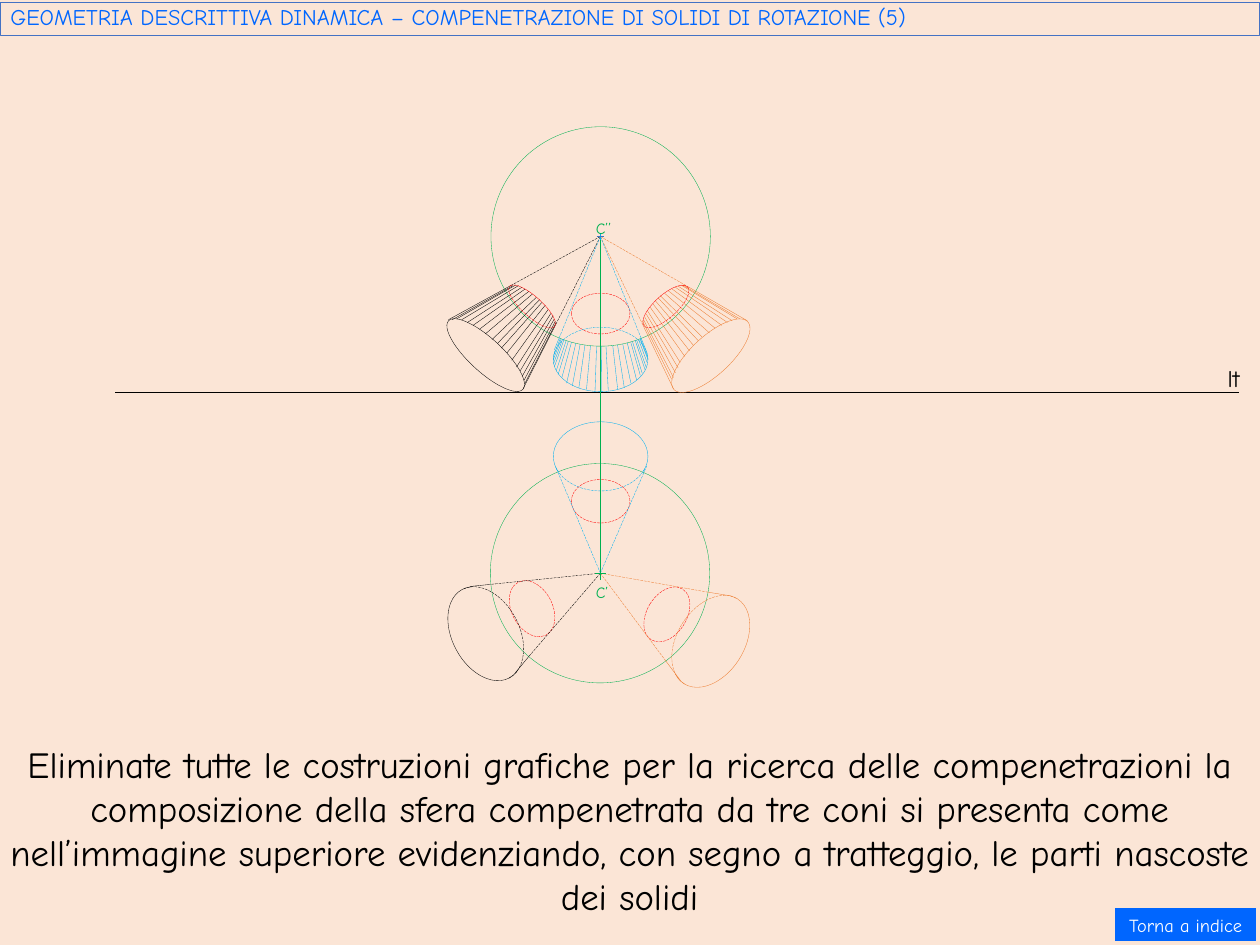
from math import hypot

from lxml import etree
from pptx import Presentation
from pptx.dml.color import RGBColor
from pptx.enum.dml import MSO_LINE
from pptx.enum.shapes import MSO_CONNECTOR, MSO_SHAPE
from pptx.enum.text import MSO_ANCHOR, MSO_AUTO_SIZE, PP_ALIGN
from pptx.oxml.ns import qn
from pptx.util import Pt

STRAIGHT = MSO_CONNECTOR.STRAIGHT
ELLIPSE, ARC, BUTTON = MSO_SHAPE.OVAL, MSO_SHAPE.ARC, MSO_SHAPE.ACTION_BUTTON_CUSTOM
DASH = MSO_LINE.LONG_DASH
MIDDLE, TOP = MSO_ANCHOR.MIDDLE, MSO_ANCHOR.TOP
LEFT, CENTER = PP_ALIGN.LEFT, PP_ALIGN.CENTER
GROW, FIXED = MSO_AUTO_SIZE.SHAPE_TO_FIT_TEXT, MSO_AUTO_SIZE.NONE

FONT = "Comic Neue"
BLACK, ORANGE, CYAN = "000000", "ED7D31", "00B0F0"
GREEN, RED, BLUE, STEEL = "00B050", "FF0000", "0066FF", "4472C4"

APEX_FRONT = (457, 180)
APEX_PLAN = (457, 436.3)
RADIUS = 83.5
CUT_RATIO = 0.59  # share of each side cone's generatrix inside the sphere

BLACK_RIM = [
    (341.3, 243.4), (344.2, 243.4), (347.8, 242.6), (351.4, 243.4), (355.7, 245.5),
    (360, 247.7), (365, 250.6), (369.4, 254.2), (374.4, 258.5), (378.7, 261.4),
    (381.6, 265), (385.9, 268.6), (389.5, 274.3), (393.1, 279.4), (396, 282.2),
    (397.4, 286.6), (398.9, 289.4), (399.6, 291.6), (398.2, 295.9)]
ORANGE_RIM = [
    (568.8, 244.1), (563, 242.6), (560.9, 242.6), (557.3, 244.1), (553.7, 245.5),
    (549.4, 247.7), (544.3, 249.8), (540, 253.4), (534.2, 256.3), (531.4, 259.2),
    (527.8, 262.8), (524.9, 267.1), (521.3, 271.4), (517.7, 275.8), (516.2, 280.1),
    (514.1, 283.7), (512.6, 287.3), (511.2, 288.7), (512.6, 295.9)]
CYAN_RIM = [
    (492.5, 268.6), (492.5, 270.7), (493.2, 273.6), (492.5, 275.8), (491.8, 279.4),
    (491, 281.5), (488.9, 284.4), (487.4, 285.8), (484.6, 289.4), (480.2, 291.6),
    (475.2, 295.2), (470.2, 296.6), (463, 297.4), (457.9, 298.1), (452.9, 298.1),
    (446.4, 296.6), (440.6, 295.2), (435.6, 293.8), (431.3, 291.6), (427.7, 287.3),
    (424.8, 285.1), (423.4, 282.2), (421.9, 279.4), (421.2, 277.2), (421.2, 273.6),
    (421.9, 269.3), (421.9, 266.4)]

# Colour, end of the hidden part, end on the base (None: no visible part)
PLAN_EDGES = [
    (BLACK, (371.5, 445), (357.8, 446.4)),
    (BLACK, (402.5, 499.7), (392.4, 511.9)),
    (ORANGE, (538.6, 450.7), (556.6, 453.6)),
    (ORANGE, (506.9, 503.3), (517.7, 517.7)),
    (CYAN, (492.5, 354.2), None),
    (CYAN, (423.4, 356.4), None)]

# Box, colour, rotation, dash
ELLIPSES = [
    ((373.7, 96.5, 167, 167), GREEN, 0, None),
    ((373.2, 352.8, 167, 167), GREEN, 0, None),
    ((357.1, 231.8, 25.2, 77), BLACK, 312.7, None),
    ((526.3, 232.6, 29.5, 76.3), ORANGE, 47.4, None),
    ((389.5, 440.6, 31, 45.4), RED, 332.2, DASH),
    ((492.5, 445, 30.2, 45.4), RED, 31.5, DASH),
    ((434.9, 365, 44.6, 33.1), RED, 0, DASH),
    ((434.9, 223.2, 44.6, 31), RED, 0, DASH)]

# Box, colour, rotation, then flip and adjustments of the visible and hidden arcs
SPLIT_ELLIPSES = [
    ((344.2, 444.2, 51.1, 76.3), BLACK, 332,
     (None, 46.58, 169.58), ("flipH", 53.66, 161.73)),
    ((515.5, 450, 51.1, 76.3), ORANGE, 32.3,
     ("flipH", 45.04, 166.93), (None, 53.66, 161.73)),
    ((421.2, 321.1, 72, 52.6), CYAN, 0,
     (None, 95.7, 12.23), ("flipV", 115.84, 207.4)),
    ((421.2, 249.1, 72, 49), CYAN, 0,
     ("flipV", 101.59, 4.75), (None, 107.94, 0)),
    ((498.2, 211, 17.3, 44.6), RED, 48,
     ("flipH", 160.72, 54.48), (None, 162, 54.48)),
    ((397.4, 210.2, 15.1, 46.1), RED, 132,
     ("flipH", 162, 53.91), (None, 162, 53.91))]


def rgb(value):
    return RGBColor.from_string(value)


def format_line(line, color, dash=None, width=0.25):
    line.color.rgb = rgb(color)
    for name, value in {"width": Pt(width), "dash_style": dash}.items():
        setattr(line, name, value)


def add_line(s, start, end, color, dash=None):
    c = s.shapes.add_connector(STRAIGHT, *(Pt(v) for v in (*start, *end)))
    format_line(c.line, color, dash)
    etree.SubElement(c._element.spPr, qn("a:effectLst"))


def add_outline(s, kind, box, color, rotation=0, dash=None):
    sp = s.shapes.add_shape(kind, *(Pt(v) for v in box))
    sp.shadow.inherit = False
    sp.fill.background()
    sp.rotation = rotation
    format_line(sp.line, color, dash)
    return sp


def add_arc(s, box, color, rotation, dash, flip, start, end):
    sp = add_outline(s, ARC, box, color, rotation, dash)
    for i, value in enumerate((start, end)):
        sp.adjustments[i] = value
    if flip:
        sp._element.spPr.find(qn("a:xfrm")).set(flip, "1")


def add_generatrices(s, rim, color, cut):
    """Draw lines from the cut to the rim; cut gives the share lost to the sphere."""
    ax, ay = APEX_FRONT
    for x, y in rim:
        k = cut(hypot(x - ax, y - ay))
        start = (ax + k * (x - ax), ay + k * (y - ay))
        add_line(s, start, (x, y), color)
        if (x, y) in (rim[0], rim[-1]):
            add_line(s, APEX_FRONT, start, color, DASH)


def add_cross(s, center, arm, colors):
    x, y = center
    add_line(s, (x, y - arm), (x, y + arm), colors[0])
    add_line(s, (x - arm, y), (x + arm, y), colors[1])


def write(sp, text, size, color, align=LEFT, anchor=TOP, auto_size=FIXED, spacing=1.0):
    tf = sp.text_frame
    frame = {"word_wrap": True, "auto_size": auto_size, "vertical_anchor": anchor}
    for name, value in frame.items():
        setattr(tf, name, value)
    p = tf.paragraphs[0]
    p.alignment, p.line_spacing = align, spacing
    r = p.add_run()
    r.text = text
    for name, value in {"name": FONT, "size": Pt(size)}.items():
        setattr(r.font, name, value)
    r.font.color.rgb = rgb(color)


def add_label(s, box, text, size, color, align=LEFT):
    sp = s.shapes.add_textbox(*(Pt(v) for v in box))
    write(sp, text, size, color, align, auto_size=GROW)


def add_title(s, text):
    sp = s.shapes.title
    box = {"left": 0.7, "top": 1.8, "width": 958.3, "height": 25.2}
    for name, value in box.items():
        setattr(sp, name, Pt(value))
    format_line(sp.line, STEEL, width=0.75)
    write(sp, text, 17, BLUE, anchor=MIDDLE, spacing=0.8)


def add_button(s, box, text):
    sp = s.shapes.add_shape(BUTTON, *(Pt(v) for v in box))
    sp.shadow.inherit = False
    sp.fill.solid()
    sp.fill.fore_color.rgb = rgb(BLUE)
    sp.line.fill.background()
    write(sp, text, 14, "FFFFFF", CENTER, MIDDLE)


def main():
    prs = Presentation()
    prs.slide_width, prs.slide_height = Pt(959.04), Pt(719.28)
    s = prs.slides.add_slide(prs.slide_layouts[5])
    s.background.fill.solid()
    s.background.fill.fore_color.rgb = rgb("FBE5D6")
    add_title(s, "GEOMETRIA DESCRITTIVA DINAMICA – COMPENETRAZIONE DI SOLIDI DI ROTAZIONE (5)")

    add_line(s, (87.8, 298.4), (943.2, 298.4), BLACK)
    for box, color, rotation, dash in ELLIPSES:
        add_outline(s, ELLIPSE, box, color, rotation, dash)
    add_generatrices(s, BLACK_RIM, BLACK, lambda length: CUT_RATIO)
    add_generatrices(s, ORANGE_RIM, ORANGE, lambda length: CUT_RATIO)
    add_generatrices(s, CYAN_RIM, CYAN, lambda length: RADIUS / length)
    for color, tangent, end in PLAN_EDGES:
        add_line(s, APEX_PLAN, tangent, color, DASH)
        if end:
            add_line(s, tangent, end, color)
    for box, color, rotation, visible, hidden in SPLIT_ELLIPSES:
        add_arc(s, box, color, rotation, DASH, *hidden)
        add_arc(s, box, color, rotation, None, *visible)
    add_line(s, (457, 441.4), (457, 179.3), GREEN)
    add_cross(s, APEX_FRONT, 2.8, (CYAN, STEEL))
    add_cross(s, APEX_PLAN, 4.2, (GREEN, GREEN))

    add_label(s, (927.4, 273.6, 34.6, 28.8), "lt", 18, BLACK)
    add_label(s, (446.4, 439.9, 28.1, 21.6), "C’", 12, GREEN)
    add_label(s, (446.4, 162.7, 28.1, 17.3), "C’’", 12, GREEN)
    add_label(s, (0, 560.9, 958.3, 143.3),
              "Eliminate tutte le costruzioni grafiche per la ricerca delle compenetrazioni "
              "la composizione della sfera compenetrata da tre coni si presenta come "
              "nell’immagine superiore evidenziando, con segno a tratteggio, le parti "
              "nascoste dei solidi", 28, BLACK, CENTER)
    add_button(s, (848.9, 691.2, 107.3, 25.2), "Torna a indice")
    prs.save("out.pptx")


if __name__ == "__main__":
    main()
